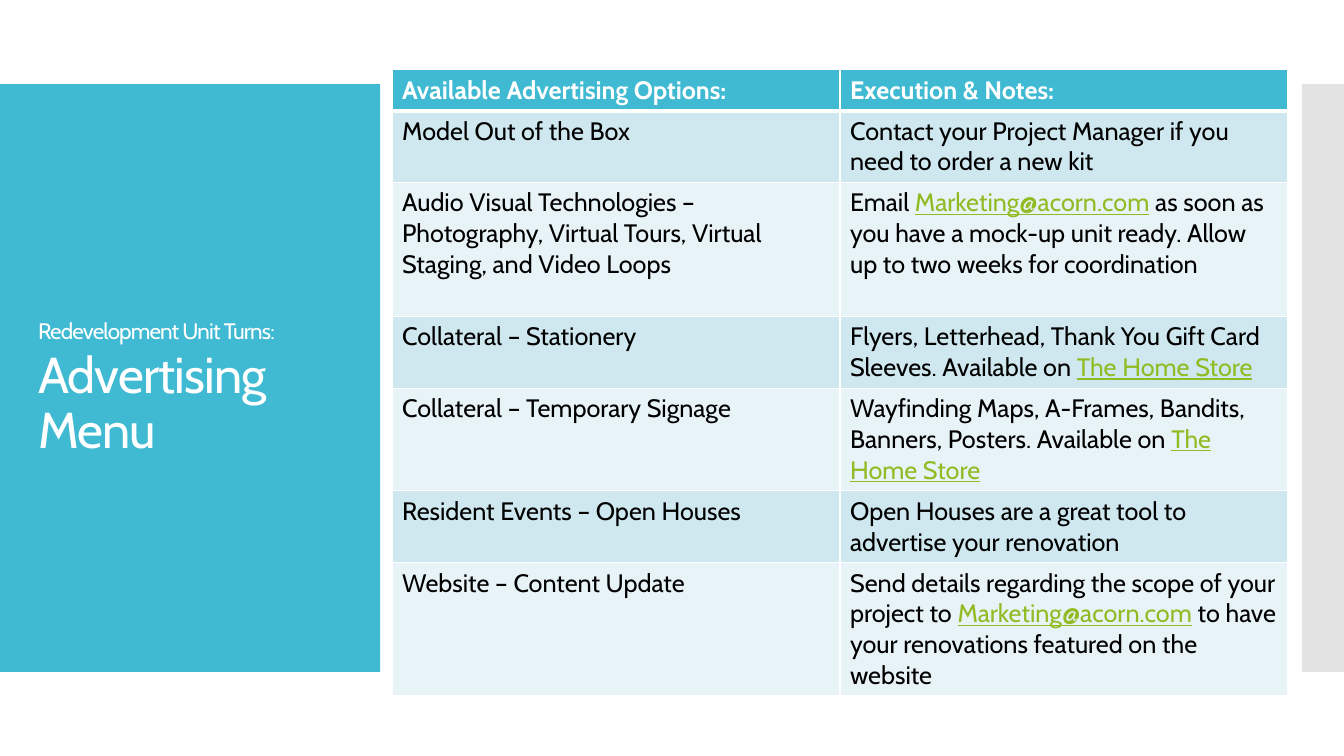
from lxml import etree
from pptx import Presentation
from pptx import util as u
from pptx.dml.color import RGBColor
from pptx.enum import shapes, text
from pptx.oxml import ns

TEAL = RGBColor(0x40, 0xBA, 0xD2)
GRAY = RGBColor(0xC8, 0xC8, 0xC8)
WHITE = RGBColor(0xFF, 0xFF, 0xFF)
BLACK = RGBColor(0, 0, 0)
GREEN = RGBColor(0x90, 0xBB, 0x23)
BANDS = [RGBColor(0xE8, 0xF3, 0xF7), RGBColor(0xCF, 0xE7, 0xEE)]
FONT = "Cabin"
LINK_MARK = "|"

ROWS = [
    (1.03, "Available Advertising Options:", "Execution & Notes:"),
    (1.81, "Model Out of the Box",
     "Contact your Project Manager if you need to order a new kit"),
    (3.37, "Audio Visual Technologies – Photography, Virtual Tours, Virtual Staging, and Video Loops",
     "Email |Marketing@acorn.com| as soon as you have a mock-up unit ready. "
     "Allow up to two weeks for coordination"),
    (1.81, "Collateral – Stationery",
     "Flyers, Letterhead, Thank You Gift Card Sleeves. Available on |The Home Store"),
    (2.59, "Collateral – Temporary Signage",
     "Wayfinding Maps, A-Frames, Bandits, Banners, Posters. Available on |The Home Store"),
    (1.81, "Resident Events – Open Houses",
     "Open Houses are a great tool to advertise your renovation"),
    (3.36, "Website – Content Update",
     "Send details regarding the scope of your project to |Marketing@acorn.com| "
     "to have your renovations featured on the website"),
]


def add_border(cell, side, points):
    line = etree.SubElement(cell._tc.get_or_add_tcPr(), ns.qn(f"a:{side}"), w=str(u.Pt(points)))
    fill = etree.SubElement(line, ns.qn("a:solidFill"))
    etree.SubElement(fill, ns.qn("a:srgbClr"), val=str(WHITE))


deck = Presentation()
deck.slide_width = u.Cm(33.87)
deck.slide_height = u.Cm(19.05)
page = deck.slides.add_slide(deck.slide_layouts[6])

for left, width, color in [(0, 9.58, TEAL), (32.81, 1.06, GRAY)]:
    panel = page.shapes.add_shape(
        shapes.MSO_SHAPE.RECTANGLE, u.Cm(left), u.Cm(2.12), u.Cm(width), u.Cm(14.81))
    panel.shadow.inherit = False
    panel.fill.solid()
    panel.fill.fore_color.rgb = color
    panel.line.fill.background()
    if color == GRAY:
        tint = panel.fill._xPr.find(".//" + ns.qn("a:srgbClr"))
        etree.SubElement(tint, ns.qn("a:alpha"), val="50000")

title = page.shapes.add_textbox(u.Cm(0.71), u.Cm(3.12), u.Cm(8.74), u.Cm(12.78))
title.text_frame.word_wrap = True
title.text_frame.vertical_anchor = text.MSO_ANCHOR.MIDDLE
para = title.text_frame.paragraphs[0]
para.line_spacing = 0.9
para.font.name = FONT
para.font.color.rgb = WHITE
for words, size in [("Redevelopment Unit Turns:", 16), (" Advertising Menu", 36)]:
    span = para.add_run()
    span.text = words
    span.font.size = u.Pt(size)
    span._r.get_or_add_rPr().set("spc", "-60")

menu = page.shapes.add_table(
    len(ROWS), 2, u.Cm(9.88), u.Cm(1.76), u.Cm(22.58), u.Cm(15.78)).table
for index, (height, *entries) in enumerate(ROWS):
    menu.rows[index].height = u.Cm(height)
    header = index == 0
    for column, entry in enumerate(entries):
        cell = menu.cell(index, column)
        for side in ("lnL", "lnR", "lnT", "lnB"):
            thick = (index, side) in [(0, "lnB"), (1, "lnT")]
            add_border(cell, side, 3 if thick else 1)
        cell.fill.solid()
        cell.fill.fore_color.rgb = TEAL if header else BANDS[index % 2]
        para = cell.text_frame.paragraphs[0]
        para.font.name = FONT
        para.font.size = u.Pt(18)
        para.font.bold = header
        para.font.color.rgb = WHITE if header else BLACK
        for part, words in enumerate(entry.split(LINK_MARK)):
            span = para.add_run()
            span.text = words
            if part % 2:
                span.font.color.rgb = GREEN
                span.font.underline = True

deck.save("out.pptx")
